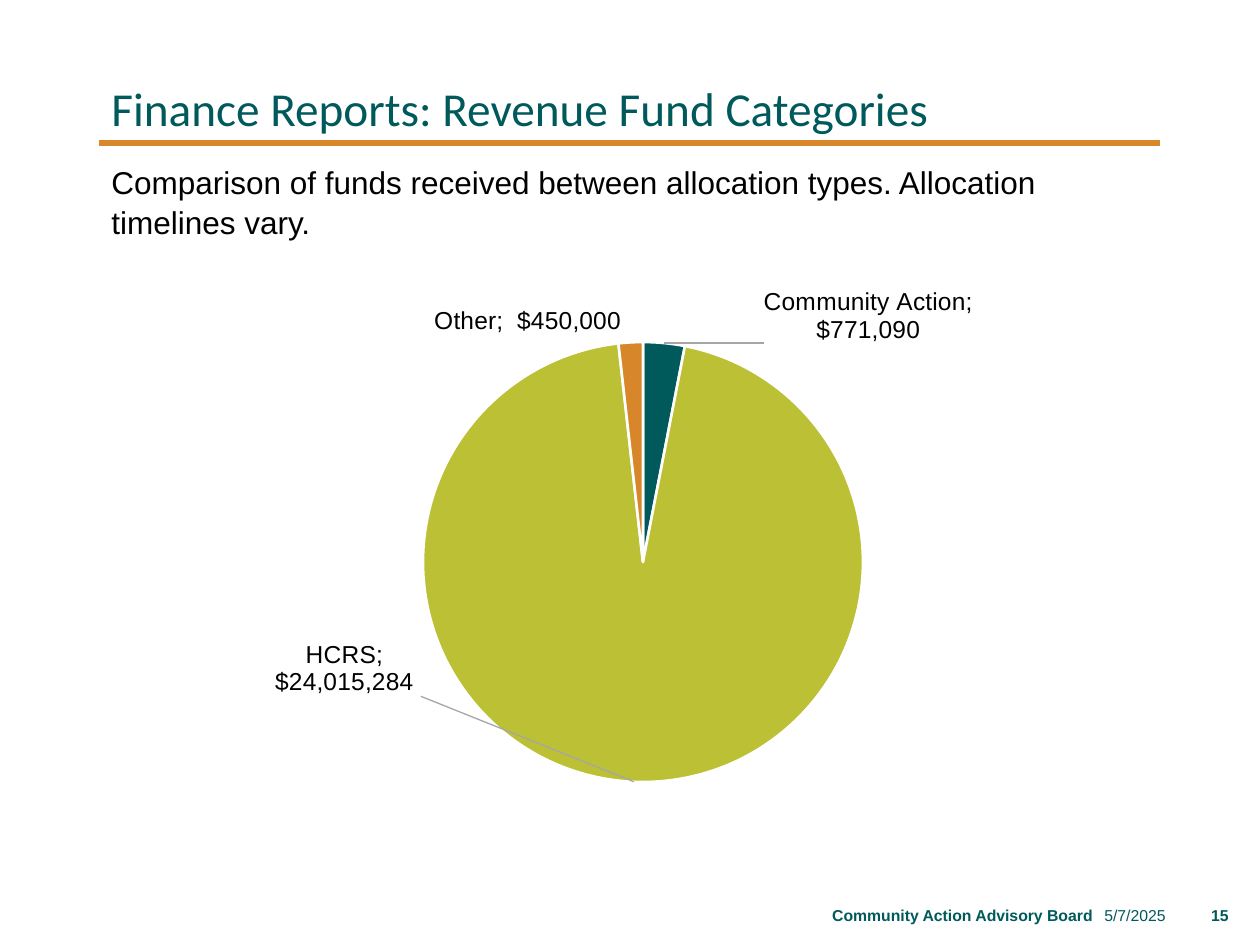
from lxml import etree
from pptx import Presentation
from pptx.chart.data import CategoryChartData
from pptx.dml.color import RGBColor
from pptx.enum.chart import XL_CHART_TYPE, XL_LABEL_POSITION
from pptx.enum.shapes import MSO_CONNECTOR
from pptx.enum.text import MSO_ANCHOR, PP_ALIGN
from pptx.oxml.ns import qn
from pptx.util import Emu, Pt

PIE = XL_CHART_TYPE.PIE
OUTSIDE_END = XL_LABEL_POSITION.OUTSIDE_END
STRAIGHT = MSO_CONNECTOR.STRAIGHT
TOP, MIDDLE, BOTTOM = MSO_ANCHOR.TOP, MSO_ANCHOR.MIDDLE, MSO_ANCHOR.BOTTOM
LEFT, RIGHT = PP_ALIGN.LEFT, PP_ALIGN.RIGHT

TEAL = RGBColor(0x00, 0x59, 0x5B)
FOOTER_TEAL = RGBColor(0x00, 0x5A, 0x5B)
LIME = RGBColor(0xBB, 0xC0, 0x35)
ORANGE = RGBColor(0xD7, 0x87, 0x2A)
RULE_ORANGE = RGBColor(0xD8, 0x87, 0x2A)
BLACK = RGBColor(0x00, 0x00, 0x00)
WHITE = RGBColor(0xFF, 0xFF, 0xFF)
LEADER_GRAY = "A6A6A6"

PX_PER_INCH = 126
DOLLARS = r'_("$"* #,##0_);_("$"* \(#,##0\);_("$"* "-"??_);_(@_)'

# Category, value, colour, label shift as a share of the chart size
FUNDS = [
    ("Community Action", 771090, TEAL, (0.09, 0.01)),
    ("HCRS", 24015284, LIME, (-0.26, -0.19)),
    ("Other", 450000, ORANGE, (-0.09, 0)),
]
PLOT_AREA = {"x": 0.31, "y": 0.16, "w": 0.4, "h": 0.67}

# Text, left, width, bold
FOOTERS = [
    ("5/7/2025", 1079, 99, False),
    ("Community Action Advisory Board", 315, 790, True),
    ("15", 1182, 59, True),
]


def px(length):
    return Emu(round(length * 914400 / PX_PER_INCH))


def chart_element(tag, **attributes):
    return etree.Element(qn(f"c:{tag}"), attributes)


def manual_layout(**values):
    layout = chart_element("layout")
    manual = etree.SubElement(layout, qn("c:manualLayout"))
    for tag, value in values.items():
        etree.SubElement(manual, qn(f"c:{tag}"), val=str(value))
    return layout


def add_separator(labels):
    separator = chart_element("separator")
    separator.text = "; "
    labels.find(qn("c:showBubbleSize")).addnext(separator)


class SlideBuilder:
    def __init__(self, slide, font="Arial"):
        self.slide = slide
        self.font = font

    def style(self, font, size, color, bold=False, name=None):
        font.name = name or self.font
        font.size = Pt(size)
        font.bold = bold
        font.color.rgb = color

    def text(self, text, left, top, width, height, size, color, bold=False,
             name=None, align=LEFT, anchor=TOP, spacing=1):
        box = self.slide.shapes.add_textbox(px(left), px(top), px(width), px(height))
        frame = box.text_frame
        frame.word_wrap = True
        frame.vertical_anchor = anchor
        para = frame.paragraphs[0]
        para.text = text
        para.alignment = align
        para.line_spacing = spacing
        self.style(para.font, size, color, bold, name)

    def rule(self, left, right, y, color, width):
        line = self.slide.shapes.add_connector(STRAIGHT, px(left), px(y), px(right), px(y))
        line.line.color.rgb = color
        line.line.width = Pt(width)
        etree.SubElement(line._element.spPr, qn("a:effectLst"))

    def pie(self, funds, left, top, width, height, size):
        data = CategoryChartData(number_format=DOLLARS)
        data.categories = [fund[0] for fund in funds]
        data.add_series("Series 1", [fund[1] for fund in funds])
        chart = self.slide.shapes.add_chart(
            PIE, px(left), px(top), px(width), px(height), data).chart
        chart.has_legend = False
        chart.has_title = False
        self.style(chart.font, size, BLACK)
        plot = chart.plots[0]
        plot.vary_by_categories = True
        series = plot.series[0]

        # Labels shared by all slices
        labels = series.data_labels
        labels.show_value = True
        labels.show_category_name = True
        labels.number_format = DOLLARS
        labels.number_format_is_linked = False
        labels.position = OUTSIDE_END
        self.style(labels.font, size, BLACK)

        # Slice colours and fonts of the moved labels
        for index, (_, _, color, _) in enumerate(funds):
            point = series.points[index]
            point.format.fill.solid()
            point.format.fill.fore_color.rgb = color
            point.format.line.color.rgb = WHITE
            point.format.line.width = Pt(1.5)
            point.data_label.position = OUTSIDE_END
            self.style(point.data_label.font, size, BLACK)

        # Label places, number format and separator
        group = series._element.find(qn("c:dLbls"))
        for label, fund in zip(group.findall(qn("c:dLbl")), funds):
            shift_x, shift_y = fund[3]
            layout = manual_layout(x=shift_x, y=shift_y)
            label.find(qn("c:idx")).addnext(layout)
            layout.addnext(chart_element("numFmt", formatCode=DOLLARS, sourceLinked="0"))
            label.find(qn("c:showCatName")).set("val", "1")
            add_separator(label)
        add_separator(group)

        # Leader lines
        for old in group.findall(qn("c:showLeaderLines")):
            group.remove(old)
        etree.SubElement(group, qn("c:showLeaderLines"), val="1")
        leaders = etree.SubElement(group, qn("c:leaderLines"))
        shape = etree.SubElement(leaders, qn("c:spPr"))
        line = etree.SubElement(shape, qn("a:ln"), w=str(Pt(0.75)))
        fill = etree.SubElement(line, qn("a:solidFill"))
        etree.SubElement(fill, qn("a:srgbClr"), val=LEADER_GRAY)

        # Plot area
        area = plot._element.getparent()
        for old in area.findall(qn("c:layout")):
            area.remove(old)
        area.insert(0, manual_layout(layoutTarget="inner", xMode="edge", yMode="edge",
                                     **PLOT_AREA))


def main():
    deck = Presentation()
    deck.slide_width, deck.slide_height = px(1260), px(945)
    page = SlideBuilder(deck.slides.add_slide(deck.slide_layouts[6]))

    # Heading
    page.rule(99, 1160, 143, RULE_ORANGE, 3)
    page.text("Comparison of funds received between allocation types. "
              "Allocation timelines vary.",
              99, 155, 1061, 130, 18, BLACK, spacing=1.05)
    page.text("Finance Reports: Revenue Fund Categories",
              99, 50, 1061, 93, 27, TEAL, name="Calibri", anchor=BOTTOM, spacing=0.9)

    # Footer
    for text, left, width, bold in FOOTERS:
        page.text(text, left, 890, width, 50, 9, FOOTER_TEAL, bold,
                  align=RIGHT, anchor=MIDDLE)

    # Revenue chart
    page.pie(FUNDS, 82, 176, 1100, 780, 14)
    deck.save("out.pptx")


if __name__ == "__main__":
    main()
